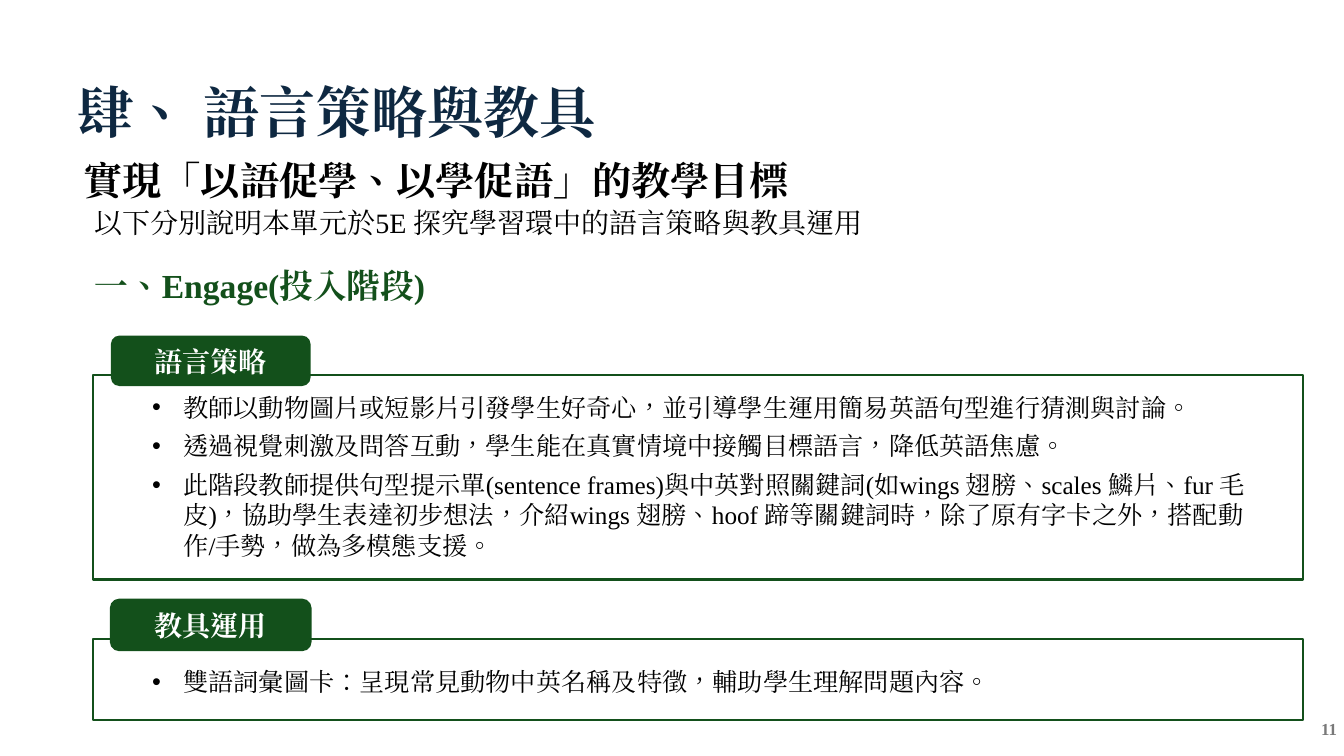
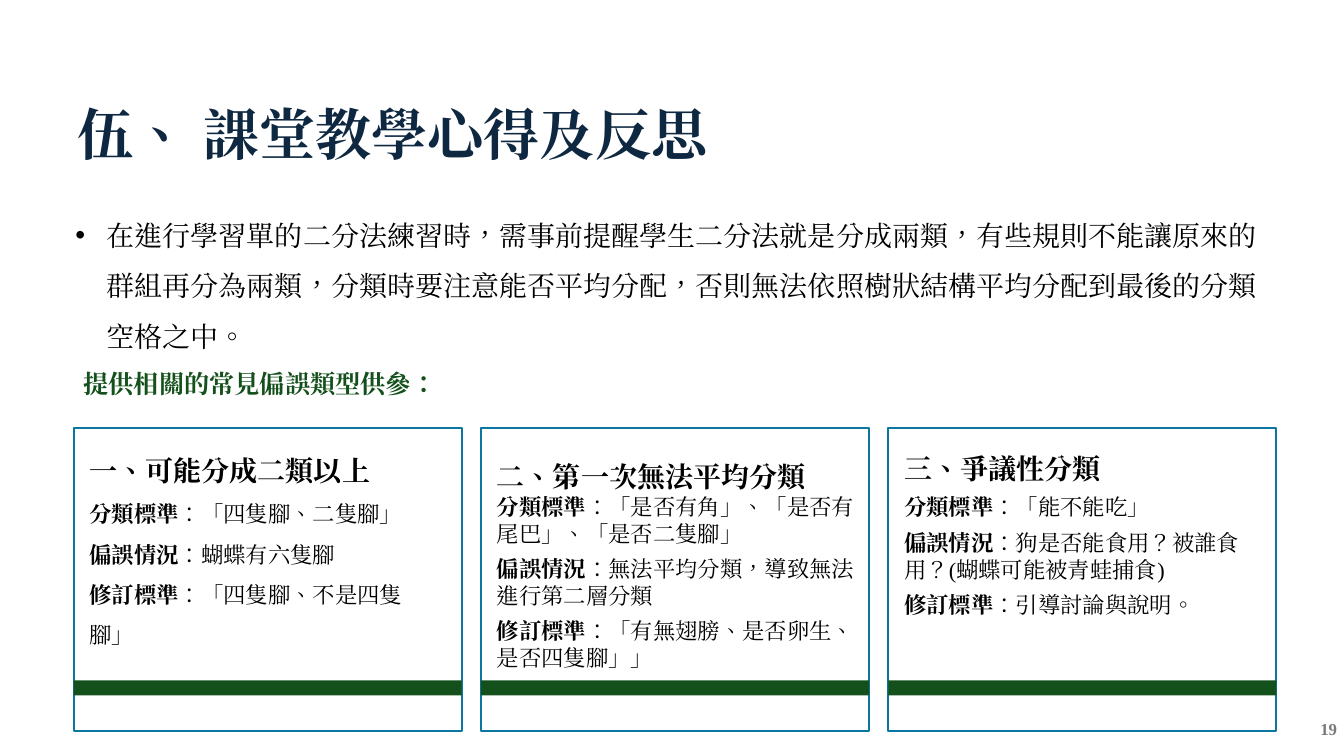
from lxml import etree
from pptx import Presentation
from pptx.dml.color import RGBColor
from pptx.enum.shapes import MSO_SHAPE
from pptx.enum.text import MSO_ANCHOR, MSO_AUTO_SIZE, PP_ALIGN
from pptx.oxml.ns import qn
from pptx.util import Inches, Pt

RECT, ROUNDED = MSO_SHAPE.RECTANGLE, MSO_SHAPE.ROUNDED_RECTANGLE
TOP, MIDDLE = MSO_ANCHOR.TOP, MSO_ANCHOR.MIDDLE
LEFT, CENTER, RIGHT = PP_ALIGN.LEFT, PP_ALIGN.CENTER, PP_ALIGN.RIGHT
NO_AUTOFIT = MSO_AUTO_SIZE.NONE
FONT = "Times New Roman"
COLORS = {"navy": "0E2841", "black": "000000", "white": "FFFFFF",
          "green": "13501B", "blue": "0B76A0", "gray": "797979"}
TITLE_ONLY = 5
BULLET_INDENT = 0.31

STRATEGY = {
    "title": "肆、 語言策略與教具",
    "number": "11",
    "goal": "實現「以語促學、以學促語」的教學目標",
    "intro": "以下分別說明本單元於5E 探究學習環中的語言策略與教具運用",
    "stage": "一、Engage(投入階段)",
    "panels": [
        {"label": "語言策略", "top": 3.72, "height": 2.03, "inset": 0.12, "outline": None,
         "points": [
             "教師以動物圖片或短影片引發學生好奇心，並引導學生運用簡易英語句型進行猜測與討論。",
             "透過視覺刺激及問答互動，學生能在真實情境中接觸目標語言，降低英語焦慮。",
             "此階段教師提供句型提示單(sentence frames)與中英對照關鍵詞(如wings 翅膀、scales 鱗片、"
             "fur 毛皮)，協助學生表達初步想法，介紹wings 翅膀、hoof 蹄等關鍵詞時，"
             "除了原有字卡之外，搭配動作/手勢，做為多模態支援。"]},
        {"label": "教具運用", "top": 6.34, "height": 0.8, "inset": 0.22, "outline": "green",
         "points": ["雙語詞彙圖卡：呈現常見動物中英名稱及特徵，輔助學生理解問題內容。"]},
    ],
}

REFLECTION = {
    "title": "伍、 課堂教學心得及反思",
    "number": "19",
    "reminder": "在進行學習單的二分法練習時，需事前提醒學生二分法就是分成兩類，"
                "有些規則不能讓原來的群組再分為兩類，分類時要注意能否平均分配，"
                "否則無法依照樹狀結構平均分配到最後的分類空格之中。",
    "lead": "提供相關的常見偏誤類型供參：",
    "labels": ("分類標準", "偏誤情況", "修訂標準"),
    "cards": [
        {"heading": "一、可能分成二類以上", "top": 4.45, "width": 3.67,
         "heading_format": {}, "detail_format": {"spacing": 1.5},
         "details": ("：「四隻腳、二隻腳」", "：蝴蝶有六隻腳", "：「四隻腳、不是四隻腳」")},
        {"heading": "二、第一次無法平均分類", "top": 4.34, "width": 3.78,
         "heading_format": {"spacing": 1.5}, "detail_format": {"after": 6},
         "details": ("：「是否有角」、「是否有尾巴」、「是否二隻腳」",
                     "：無法平均分類，導致無法進行第二層分類",
                     "：「有無翅膀、是否卵生、是否四隻腳」」")},
        {"heading": "三、爭議性分類", "top": 4.43, "width": 3.67,
         "heading_format": {"after": 6}, "detail_format": {"after": 6},
         "details": ("：「能不能吃」", "：狗是否能食用？被誰食用？(蝴蝶可能被青蛙捕食)",
                     "：引導討論與說明。")},
    ],
}


def rgb(color):
    return RGBColor.from_string(COLORS[color])


def write(frame, text, size=18, color="black", bold=False, align=LEFT,
          spacing=None, after=0, bullet=False, label=""):
    first = frame.paragraphs[0]
    paragraph = frame.add_paragraph() if first.runs else first
    if bullet:
        properties = paragraph._p.get_or_add_pPr()
        properties.set("marL", str(Inches(BULLET_INDENT)))
        properties.set("indent", str(-Inches(BULLET_INDENT)))
        etree.SubElement(properties, qn("a:buFont")).set("typeface", "Arial")
        etree.SubElement(properties, qn("a:buChar")).set("char", "•")
    paragraph.alignment = align
    paragraph.space_before, paragraph.space_after = Pt(0), Pt(after)
    if spacing:
        paragraph.line_spacing = spacing
    for part, weight in ((label, True), (text, bold)):
        if not part:
            continue
        run = paragraph.add_run()
        run.text = part
        run.font.size, run.font.bold, run.font.name = Pt(size), weight, FONT
        run.font.color.rgb = rgb(color)
        run_properties = run._r.get_or_add_rPr()
        run_properties.set("lang", "zh-TW")
        etree.SubElement(run_properties, qn("a:ea")).set("typeface", FONT)


def prepare(frame, anchor=TOP):
    frame.word_wrap = True
    frame.auto_size = NO_AUTOFIT
    frame.vertical_anchor = anchor
    return frame


def add_frame(shapes, box, anchor=TOP):
    return prepare(shapes.add_textbox(*map(Inches, box)).text_frame, anchor)


def add_block(shapes, kind, box, fill, outline=None):
    block = shapes.add_shape(kind, *map(Inches, box))
    block.shadow.inherit = False
    block.fill.solid()
    block.fill.fore_color.rgb = rgb(fill)
    if outline:
        block.line.color.rgb = rgb(outline)
        block.line.width = Pt(1.5)
    else:
        block.line.fill.background()
    return block


def start_slide(deck, content, title_top):
    slide = deck.slides.add_slide(deck.slide_layouts[TITLE_ONLY])
    title = slide.shapes.title
    title.left, title.top, title.width, title.height = map(Inches, (0.67, title_top, 12, 1.17))
    write(prepare(title.text_frame, MIDDLE), content["title"], size=40, color="navy", bold=True)
    number = add_frame(slide.shapes, (12.25, 7.03, 1.11, 0.4), MIDDLE)
    write(number, content["number"], size=12, color="gray", bold=True, align=RIGHT)
    return slide.shapes


def add_panel(shapes, panel):
    group = shapes.add_group_shape().shapes
    top, height, inset = panel["top"], panel["height"], panel["inset"]
    add_block(group, RECT, (0.92, top, 12, height), "white", "green")
    points = add_frame(group, (1.41, top + inset, 11.51, height - 2 * inset))
    for point in panel["points"]:
        write(points, point, after=6, bullet=True)
    tab = add_block(group, ROUNDED, (1.1, top - 0.39, 1.98, 0.5), "green", panel["outline"])
    write(prepare(tab.text_frame, MIDDLE), panel["label"], size=20, color="white",
          bold=True, align=CENTER)


def add_card(shapes, left, card, labels):
    group = shapes.add_group_shape().shapes
    add_block(group, RECT, (left, 4.25, 3.85, 3), "white", "blue")
    body = add_frame(group, (left + 0.06, card["top"], card["width"], 2.2))
    write(body, card["heading"], size=20, bold=True, **card["heading_format"])
    for label, detail in zip(labels, card["details"]):
        write(body, detail, size=16, label=label, **card["detail_format"])
    add_block(group, RECT, (left, 6.75, 3.85, 0.15), "green")


def build_strategy(deck):
    shapes = start_slide(deck, STRATEGY, 0.52)
    write(add_frame(shapes, (0.73, 1.5, 10.33, 0.57)), STRATEGY["goal"], size=28, bold=True)
    write(add_frame(shapes, (0.84, 1.99, 7.85, 0.44)), STRATEGY["intro"], size=20)
    write(add_frame(shapes, (0.84, 2.58, 6.67, 0.5)), STRATEGY["stage"], size=24,
          color="green", bold=True)
    for panel in STRATEGY["panels"]:
        add_panel(shapes, panel)


def build_reflection(deck):
    shapes = start_slide(deck, REFLECTION, 0.74)
    write(add_frame(shapes, (0.65, 1.95, 12, 1.55)), REFLECTION["reminder"], size=20,
          spacing=1.5, bullet=True)
    write(add_frame(shapes, (0.73, 3.6, 4, 0.4)), REFLECTION["lead"], color="green", bold=True)
    for column, card in enumerate(REFLECTION["cards"]):
        add_card(shapes, 0.73 + column * (3.85 + 0.19), card, REFLECTION["labels"])


def main():
    deck = Presentation()
    deck.slide_width, deck.slide_height = Inches(13.33), Inches(7.5)
    build_strategy(deck)
    build_reflection(deck)
    deck.save("out.pptx")


if __name__ == "__main__":
    main()
